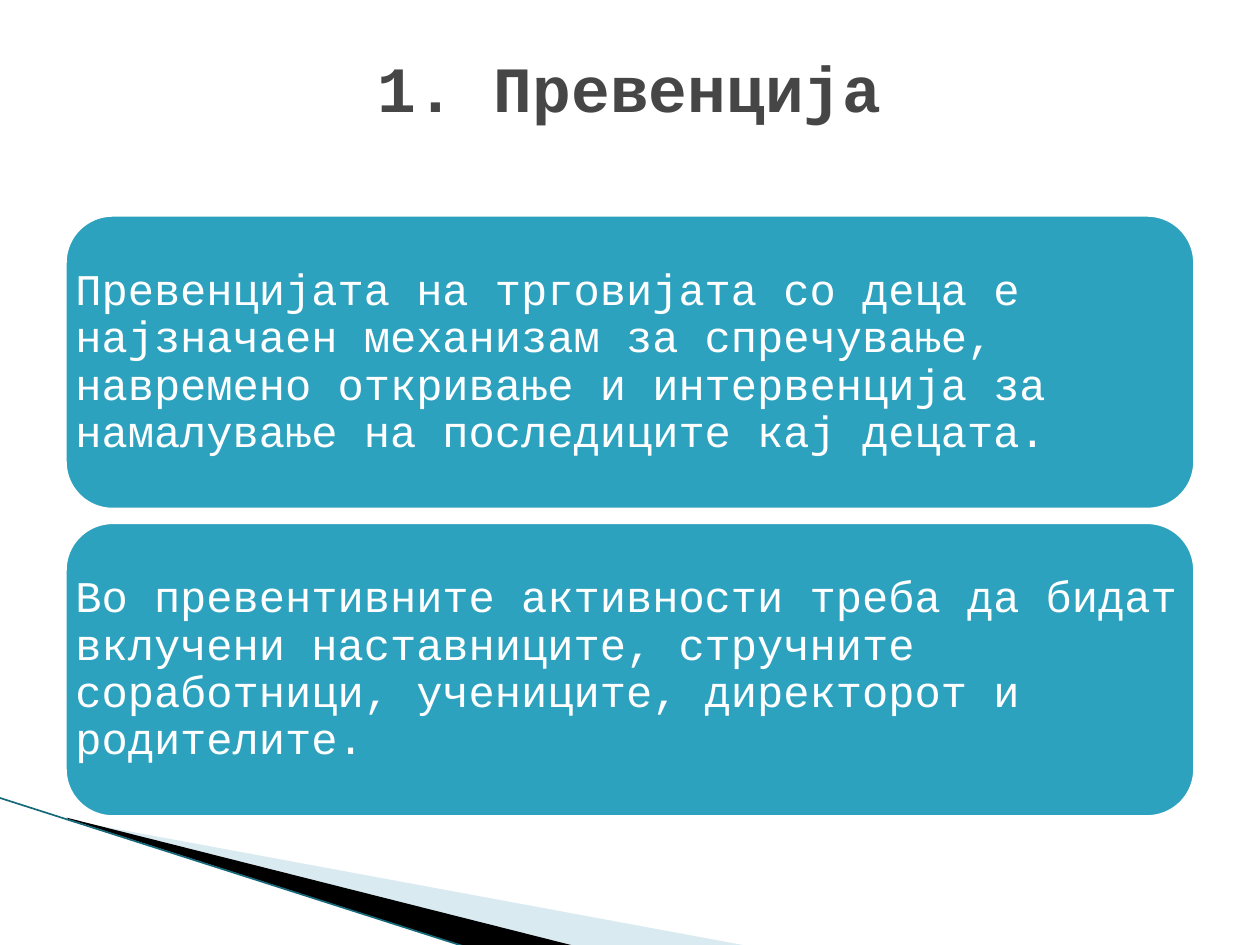
import pptx
import pptx.util
import pptx.dml.color
import pptx.enum.shapes
import pptx.enum.text
import pptx.oxml.ns
import pptx.oxml.xmlchemy
from pptx.util import Inches

COLORS = {
    "panel": "2DA2BF",
    "white": "FFFFFF",
    "title": "464646",
    "pale": "A0CBDC",
    "black": "000000",
    "edge": "16697A",
}
FONT = "Courier New"
PANEL_LEFT, PANEL_TOP, PANEL_WIDTH, PANEL_HEIGHT = 0.5, 1.69, 9, 2.37
PANEL_STEP = 2.44
STATEMENTS = [
    "Превенцијата на трговијата со деца е најзначаен механизам за спречување, "
    "навремено откривање и интервенција за намалување на последиците кај децата.",
    "Во превентивните активности треба да бидат вклучени наставниците, "
    "стручните соработници, учениците, директорот и родителите.",
]


def rgb(name):
    return pptx.dml.color.RGBColor.from_string(COLORS[name])


def add_text(slide, text, left, top, width, height, *, size, color,
             bold=False, align="LEFT", inset=0.1, line_spacing=None, space_after=None):
    box = slide.shapes.add_textbox(Inches(left), Inches(top), Inches(width), Inches(height))
    frame = box.text_frame
    frame.word_wrap = True
    frame.vertical_anchor = pptx.enum.text.MSO_ANCHOR.MIDDLE
    frame.margin_left = frame.margin_right = Inches(inset)
    frame.margin_top = frame.margin_bottom = Inches(inset)
    paragraph = frame.paragraphs[0]
    paragraph.alignment = getattr(pptx.enum.text.PP_ALIGN, align)
    paragraph.line_spacing = line_spacing
    paragraph.space_after = space_after
    run = paragraph.add_run()
    run.text = text
    run.font.name = FONT
    run.font.size = pptx.util.Pt(size)
    run.font.bold = bold
    run.font.color.rgb = rgb(color)


def add_wedge(slide, points, color, opacity=None):
    corners = [(Inches(x), Inches(y)) for x, y in points]
    builder = slide.shapes.build_freeform(*corners[0])
    builder.add_line_segments(corners[1:], close=True)
    wedge = builder.convert_to_shape()
    wedge.shadow.inherit = False
    wedge.fill.solid()
    wedge.fill.fore_color.rgb = rgb(color)
    wedge.line.fill.background()
    if opacity is not None:
        tint = wedge._element.spPr.find(".//" + pptx.oxml.ns.qn("a:srgbClr"))
        alpha = pptx.oxml.xmlchemy.OxmlElement("a:alpha")
        alpha.set("val", str(opacity * 1000))
        tint.append(alpha)


def add_edge(slide, start, end):
    edge = slide.shapes.add_connector(
        pptx.enum.shapes.MSO_CONNECTOR.STRAIGHT,
        *(Inches(value) for value in start + end))
    edge.line.color.rgb = rgb("edge")
    edge.line.width = pptx.util.Pt(0.95)
    edge._element.spPr.append(pptx.oxml.xmlchemy.OxmlElement("a:effectLst"))


def add_panel(slide, text, top):
    place = (PANEL_LEFT, top, PANEL_WIDTH, PANEL_HEIGHT)
    panel = slide.shapes.add_shape(
        pptx.enum.shapes.MSO_SHAPE.ROUNDED_RECTANGLE, *map(Inches, place))
    panel.shadow.inherit = False
    panel.fill.solid()
    panel.fill.fore_color.rgb = rgb("panel")
    panel.line.color.rgb = rgb("white")
    panel.line.width = pptx.util.Pt(4.33)
    add_text(slide, text, *place, size=25, color="white",
             line_spacing=0.9, space_after=pptx.util.Pt(8.75))


def main():
    deck = pptx.Presentation()
    deck.slide_width, deck.slide_height = Inches(10), Inches(7.5)
    slide = deck.slides.add_slide(deck.slide_layouts[6])

    add_wedge(slide, [(0.55, 6.51), (5.95, 7.51), (4.56, 7.51), (0.55, 6.5)], "pale", opacity=40)
    add_wedge(slide, [(0.53, 6.49), (4.57, 7.51), (3.72, 7.52), (0.54, 6.5)], "black")
    add_edge(slide, (-0.01, 6.33), (3.71, 7.52))

    for index, statement in enumerate(STATEMENTS):
        add_panel(slide, statement, PANEL_TOP + index * PANEL_STEP)
    add_text(slide, "1. Превенција", 0.5, 0.3, 9, 0.78,
             size=36.9, color="title", bold=True, align="CENTER", inset=0.05)

    deck.save("out.pptx")


if __name__ == "__main__":
    main()
